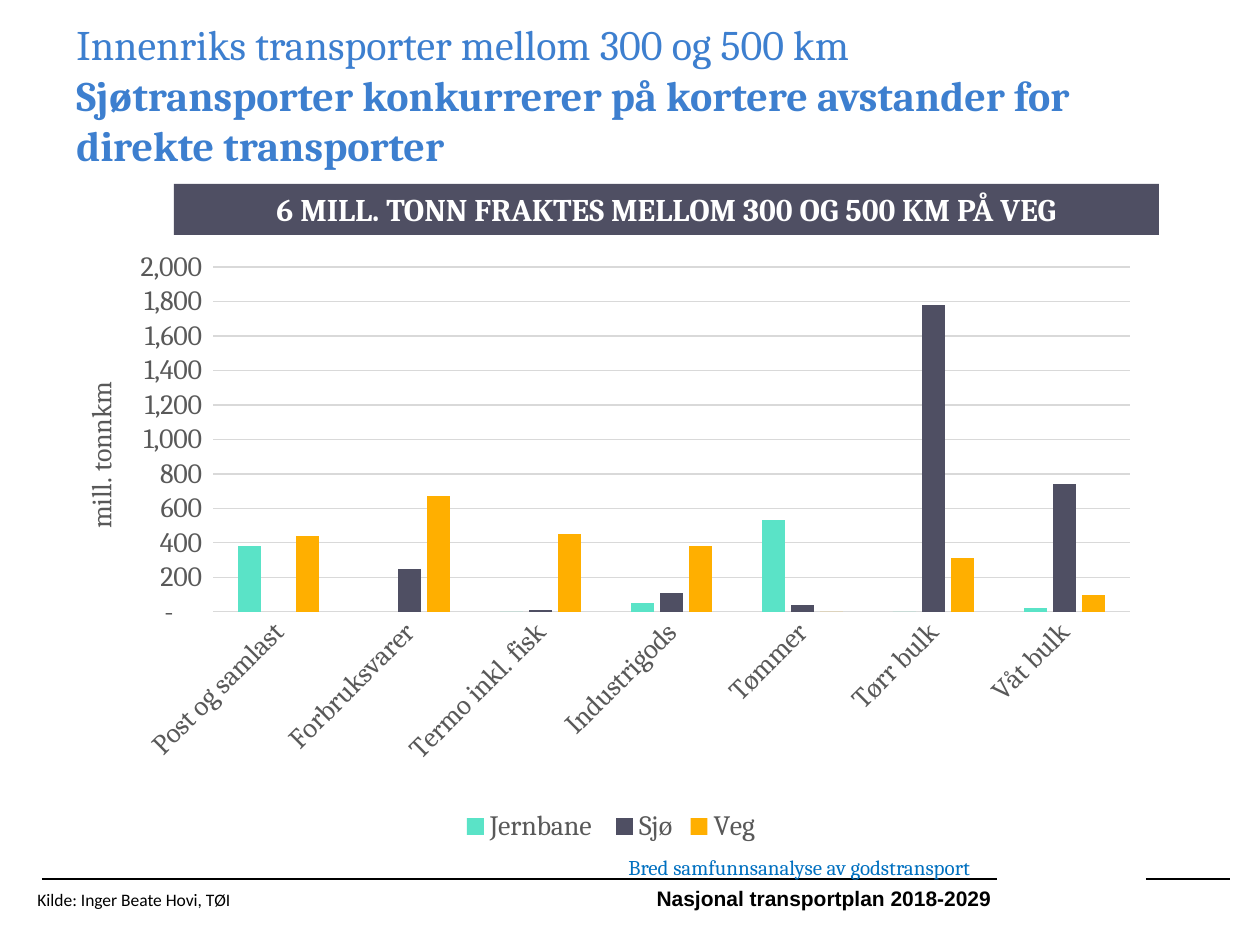
from lxml import etree
from pptx import Presentation
from pptx.chart.data import CategoryChartData
from pptx.dml.color import RGBColor
from pptx.enum.chart import XL_CHART_TYPE, XL_LEGEND_POSITION, XL_TICK_MARK
from pptx.enum.shapes import MSO_CONNECTOR, MSO_SHAPE
from pptx.enum.text import MSO_ANCHOR, PP_ALIGN
from pptx.oxml import parse_xml
from pptx.oxml.ns import nsdecls, qn
from pptx.util import Pt

PX = 914400 / 126
CLUSTERED = XL_CHART_TYPE.COLUMN_CLUSTERED
BOTTOM = XL_LEGEND_POSITION.BOTTOM
NO_TICK = XL_TICK_MARK.NONE
STRAIGHT = MSO_CONNECTOR.STRAIGHT
RECTANGLE = MSO_SHAPE.RECTANGLE
TOP, MIDDLE = MSO_ANCHOR.TOP, MSO_ANCHOR.MIDDLE
LEFT, CENTER = PP_ALIGN.LEFT, PP_ALIGN.CENTER

COLORS = {
    "title": "3D7FCF", "banner": "4F4F63", "white": "FFFFFF", "black": "000000",
    "caption": "0070C0", "axis": "595959", "grid": "D9D9D9",
    "rail": "5AE3C7", "sea": "4F4F63", "road": "FFAF00",
}
TITLE = {"name": "Cambria", "size": Pt(24), "bold": False}
BANNER = {"name": "Cambria", "size": Pt(18), "bold": True}
CHART = {"name": "Cambria", "size": Pt(16), "bold": False}
CAPTION = {"name": "Cambria", "size": Pt(12), "bold": False}
SOURCE = {"name": "Calibri", "size": Pt(10), "bold": False}
FOOTER = {"name": "Arial", "size": Pt(12), "bold": True}

CATEGORIES = ["Post og samlast", "Forbruksvarer", "Termo inkl. fisk",
              "Industrigods", "Tømmer", "Tørr bulk", "Våt bulk"]
SERIES = [
    ("Jernbane ", "rail", [380, None, 0, 50, 530, 0, 20]),
    ("Sjø", "sea", [None, 250, 10, 110, 40, 1780, 740]),
    ("Veg", "road", [440, 670, 450, 380, 0, 310, 100]),
]
NUMBER_FORMAT = '_-* #,##0_-;\\-* #,##0_-;_-* "-"??_-;_-@_-'


def emu(*lengths):
    """Turn px lengths into EMU."""
    return [round(length * PX) for length in lengths]


def rgb(color):
    """Return the named colour."""
    return RGBColor.from_string(COLORS[color])


def set_font(font, values, color):
    """Apply format values and a colour to a font."""
    for name, value in values.items():
        setattr(font, name, value)
    font.color.rgb = rgb(color)


def fill_text(shape, lines, values, color, align=LEFT, anchor=TOP, wrap=True):
    """Write one paragraph per line into a shape."""
    frame = shape.text_frame
    frame.word_wrap = wrap
    frame.vertical_anchor = anchor
    for index, line in enumerate(lines):
        paragraph = frame.add_paragraph() if index else frame.paragraphs[0]
        paragraph.alignment = align
        run = paragraph.add_run()
        run.text = line
        set_font(run.font, values, color)
    return frame


def add_text(slide, box, *text, **layout):
    """Add a text box."""
    return fill_text(slide.shapes.add_textbox(*emu(*box)), *text, **layout)


def add_rule(slide, left, top, width):
    """Add a thin horizontal line."""
    line = slide.shapes.add_connector(STRAIGHT, *emu(left, top, left + width, top))
    line.line.color.rgb = rgb("black")
    line.line.width = Pt(1)
    etree.SubElement(line._element.spPr, qn("a:effectLst"))


def add_title(slide, box):
    """Add the plain heading with its bold second paragraph."""
    lines = ["Innenriks transporter mellom 300 og 500 km",
             "Sjøtransporter konkurrerer på kortere avstander for direkte transporter"]
    frame = add_text(slide, box, lines, TITLE, "title", anchor=MIDDLE)
    frame.paragraphs[1].runs[0].font.bold = True


def add_banner(slide, box):
    """Add the filled banner above the chart."""
    banner = slide.shapes.add_shape(RECTANGLE, *emu(*box))
    banner.shadow.inherit = False
    banner.fill.solid()
    banner.fill.fore_color.rgb = rgb("banner")
    banner.line.fill.background()
    fill_text(banner, ["6 MILL. TONN FRAKTES MELLOM 300 OG 500 KM PÅ VEG"],
              BANNER, "white", align=CENTER)


def set_layout(element, index, box, chart_box, target=""):
    """Place a chart part by px measured from the chart corner."""
    for old_layout in element.findall(qn("c:layout")):
        element.remove(old_layout)
    modes = "".join(f'<c:{edge}Mode val="edge"/>' for edge in "xy")
    sizes = "".join(f'<c:{name} val="{length / whole}"/>'
                    for name, length, whole in zip("xywh", box, chart_box[2:] * 2))
    element.insert(index, parse_xml(
        f'<c:layout {nsdecls("c")}><c:manualLayout>{target}{modes}{sizes}'
        "</c:manualLayout></c:layout>"))


def format_axes(chart):
    """Style both axes, the gridlines and the axis title."""
    category, value = chart.category_axis, chart.value_axis
    for axis in (category, value):
        axis.major_tick_mark = axis.minor_tick_mark = NO_TICK
        set_font(axis.tick_labels.font, CHART, "axis")
    category._element.txPr.bodyPr.set("rot", "-2700000")
    value.minimum_scale, value.maximum_scale, value.major_unit = 0, 2000, 200
    value.tick_labels.number_format = NUMBER_FORMAT
    value.tick_labels.number_format_is_linked = False
    value.format.line.fill.background()
    for line in (category.format.line, value.major_gridlines.format.line):
        line.color.rgb = rgb("grid")
        line.width = Pt(0.75)
    frame = value.axis_title.text_frame
    frame.text = "mill. tonnkm"
    frame._txBody.bodyPr.set("rot", "-5400000")
    set_font(frame.paragraphs[0].runs[0].font, CHART, "axis")


def add_column_chart(slide, box):
    """Add the clustered columns of transport work by goods type."""
    data = CategoryChartData(number_format=NUMBER_FORMAT)
    data.categories = CATEGORIES
    for name, _, values in SERIES:
        data.add_series(name, values)
    chart = slide.shapes.add_chart(CLUSTERED, *emu(*box), data).chart
    set_font(chart.font, CHART, "black")
    chart.has_title = False
    chart.has_legend = True
    chart.legend.position = BOTTOM
    chart.legend.include_in_layout = False
    set_font(chart.legend.font, CHART, "axis")
    plot = chart.plots[0]
    plot.gap_width, plot.overlap, plot.vary_by_categories = 219, -27, False
    for series, (_, color, _) in zip(plot.series, SERIES):
        series.invert_if_negative = False
        series.format.fill.solid()
        series.format.fill.fore_color.rgb = rgb(color)
    format_axes(chart)
    set_layout(chart._chartSpace.chart.plotArea, 0, (149, 31, 917, 345), box,
               '<c:layoutTarget val="inner"/>')
    set_layout(chart.value_axis.axis_title._element, 1, (14, 141), box)


def add_footer(slide, box):
    """Add the footer rules, source, caption and plan name."""
    left, top, width, _ = box
    add_rule(slide, left + 17, top + 31, 955)
    add_rule(slide, left + width - 84, top + 31, 84)
    add_text(slide, (left + 599, top + 34, 400, 32),
             ["Nasjonal transportplan 2018-2029"], FOOTER, "black",
             align=CENTER, anchor=MIDDLE, wrap=False)
    add_text(slide, (left, top + 35, 357, 34),
             ["Kilde: Inger Beate Hovi, TØI"], SOURCE, "black")
    add_text(slide, (left + 591, top, 392, 38),
             ["Bred samfunnsanalyse av godstransport"], CAPTION, "caption", wrap=False)


def main():
    """Build and save the slide."""
    presentation = Presentation()
    presentation.slide_width, presentation.slide_height = emu(1260, 945)
    slide = presentation.slides.add_slide(presentation.slide_layouts[6])
    add_footer(slide, (25, 848, 1205, 69))
    add_title(slide, (64, 24, 1094, 141))
    add_banner(slide, (174, 184, 985, 51))
    add_column_chart(slide, (64, 236, 1094, 612))
    presentation.save("out.pptx")


if __name__ == "__main__":
    main()
